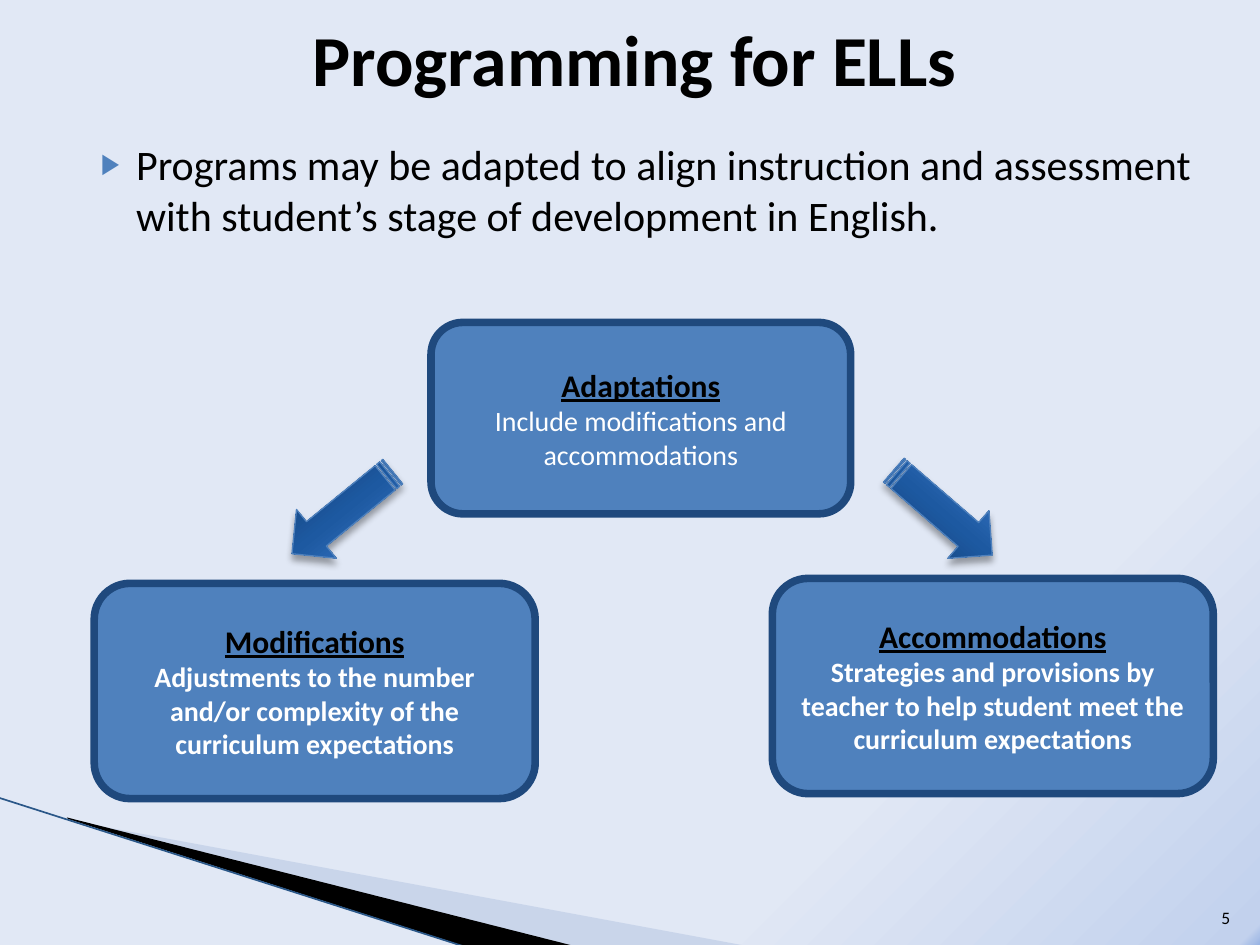
from lxml import etree
from pptx import Presentation
from pptx import util as u
from pptx.dml.color import RGBColor
from pptx.enum import shapes, text
from pptx.oxml import parse_xml
from pptx.oxml.ns import nsdecls, qn

BLACK = RGBColor(0, 0, 0)
WHITE = RGBColor(0xFF, 0xFF, 0xFF)
BLUE = RGBColor(0x4F, 0x81, 0xBD)
NAVY = RGBColor(0x1F, 0x49, 0x7D)
PALE = RGBColor(0xA7, 0xB9, 0xDB)
RULE = RGBColor(0x2A, 0x57, 0x88)
SKY = [(0, RGBColor(0x9A, 0xB5, 0xE4)), (1, RGBColor(0xC2, 0xD1, 0xED)),
       (25, RGBColor(0xE1, 0xE8, 0xF5))]
STEEL = [(0, RGBColor(0x0F, 0x37, 0x66)), (50, RGBColor(0x1D, 0x59, 0xA1)),
         (70, RGBColor(0x2D, 0x6A, 0xB6)), (100, RGBColor(0x47, 0x86, 0xDB))]
GLOW = ('<a:path path="circle"><a:fillToRect l="100000" t="100000"/></a:path>')
RISE = '<a:lin ang="16200000" scaled="0"/>'
SHADE = ('<a:outerShdw blurRad="50800" dist="38100" dir="5400000" rotWithShape="0">'
         '<a:srgbClr val="000000"><a:alpha val="35000"/></a:srgbClr></a:outerShdw>')


def blend(fill, stops, path):
    """Give a fill a gradient with the stops and the direction element."""
    fill.gradient()
    old = fill._fill._gradFill
    marks = "".join(f'<a:gs pos="{pos * 1000}"><a:srgbClr val="{col}"/></a:gs>'
                    for pos, col in stops)
    old.getparent().replace(old, parse_xml(
        f'<a:gradFill {nsdecls("a")} rotWithShape="1">'
        f'<a:gsLst>{marks}</a:gsLst>{path}</a:gradFill>'))


def write(para, words, size, color=BLACK, bold=False, under=False,
          align=text.PP_ALIGN.CENTER, face="Calibri"):
    para.alignment = align
    run = para.add_run()
    run.text = words
    font = run.font
    font.name, font.size, font.bold, font.underline = face, u.Pt(size), bold, under
    font.color.rgb = color


def place(shape, left, top, width, height):
    shape.left, shape.top = u.Cm(left), u.Cm(top)
    shape.width, shape.height = u.Cm(width), u.Cm(height)


class Deck:
    def __init__(self):
        self.file = Presentation()
        self.file.slide_width, self.file.slide_height = u.Cm(25.4), u.Cm(19.05)
        self.slide = self.file.slides.add_slide(self.file.slide_layouts[1])
        blend(self.slide.background.fill, SKY, GLOW)

    def title(self, words):
        shape = self.slide.shapes.title
        place(shape, 1.37, -0.43, 22.86, 3.18)
        shape.text_frame.vertical_anchor = text.MSO_ANCHOR.MIDDLE
        write(shape.text_frame.paragraphs[0], words, 41, bold=True)

    def bullet(self, words):
        shape = self.slide.placeholders[1]
        place(shape, 1.47, 2.67, 22.86, 13.44)
        para = shape.text_frame.paragraphs[0]
        para.space_before = u.Pt(0)
        props = para._p.get_or_add_pPr()
        props.set("marL", str(u.Cm(1.02)))
        props.set("indent", str(u.Cm(-0.71)))
        tint = etree.SubElement(props, qn("a:buClr"))
        etree.SubElement(tint, qn("a:srgbClr"), val=str(BLUE))
        etree.SubElement(props, qn("a:buSzPct"), val="68000")
        etree.SubElement(props, qn("a:buChar"), char="▶")
        write(para, words, 24, align=text.PP_ALIGN.LEFT)

    def wedge(self, points, color, alpha=100):
        start, *rest = [(u.Cm(x), u.Cm(y)) for x, y in points]
        pen = self.slide.shapes.build_freeform(*start)
        pen.add_line_segments(rest, close=True)
        shape = pen.convert_to_shape()
        shape.shadow.inherit = False
        shape.fill.solid()
        shape.fill.fore_color.rgb = color
        shape.line.fill.background()
        if alpha < 100:
            tint = shape.fill._xPr.find(qn("a:solidFill"))[0]
            etree.SubElement(tint, qn("a:alpha"), val=str(alpha * 1000))

    def rule(self, *ends):
        line = self.slide.shapes.add_connector(
            shapes.MSO_CONNECTOR.STRAIGHT, *map(u.Cm, ends))
        line.line.color.rgb = RULE
        line.line.width = u.Pt(0.95)
        etree.SubElement(line._element.spPr, qn("a:effectLst"))

    def shape(self, kind, area, line, width):
        shape = self.slide.shapes.add_shape(kind, *map(u.Cm, area))
        shape.shadow.inherit = False
        shape.line.color.rgb = line
        shape.line.width = u.Pt(width)
        return shape

    def box(self, area, head, words, bold=True):
        shape = self.shape(shapes.MSO_SHAPE.ROUNDED_RECTANGLE, area, NAVY, 4.33)
        shape.fill.solid()
        shape.fill.fore_color.rgb = BLUE
        frame = shape.text_frame
        frame.word_wrap = True
        frame.vertical_anchor = text.MSO_ANCHOR.MIDDLE
        write(frame.paragraphs[0], head, 18, bold=True, under=True)
        write(frame.add_paragraph(), words, 16, color=WHITE, bold=bold)

    def arrow(self, left, turn):
        shape = self.shape(shapes.MSO_SHAPE.STRIPED_RIGHT_ARROW,
                           (left, 9.7, 2.62, 1.27), BLUE, 0.75)
        shape.rotation = turn
        blend(shape.fill, STEEL, RISE)
        shape._element.spPr.find(qn("a:effectLst")).append(
            parse_xml(SHADE.replace("<a:outerShdw", f'<a:outerShdw {nsdecls("a")}', 1)))

    def number(self, words):
        frame = self.slide.shapes.add_textbox(
            *map(u.Cm, (24.03, 17.81, 1.02, 1.02))).text_frame
        frame.word_wrap = True
        frame.vertical_anchor = text.MSO_ANCHOR.BOTTOM
        write(frame.paragraphs[0], words, 10, align=text.PP_ALIGN.RIGHT)


def main():
    deck = Deck()
    deck.wedge([(1.4, 16.54), (15.11, 19.08), (11.58, 19.08), (1.4, 16.51)], PALE, 40)
    deck.wedge([(1.35, 16.48), (11.61, 19.08), (9.45, 19.1), (1.37, 16.51)], BLACK)
    deck.rule(-0.03, 16.08, 9.42, 19.1)
    deck.bullet("Programs may be adapted to align instruction and assessment "
                "with student’s stage of development in English.")
    deck.title("Programming for ELLs")
    deck.number("5")
    deck.box((8.69, 6.5, 8.46, 3.86), "Adaptations",
             "Include modifications and accommodations", bold=False)
    deck.box((1.9, 11.76, 8.89, 4.34), "Modifications",
             "Adjustments to the number and/or complexity of the curriculum expectations")
    deck.box((15.57, 11.66, 8.89, 4.34), "Accommodations",
             "Strategies and provisions by teacher to help student meet "
             "the curriculum expectations")
    deck.arrow(5.59, 140.8)
    deck.arrow(17.7, 40.8)
    deck.file.save("out.pptx")


if __name__ == "__main__":
    main()
